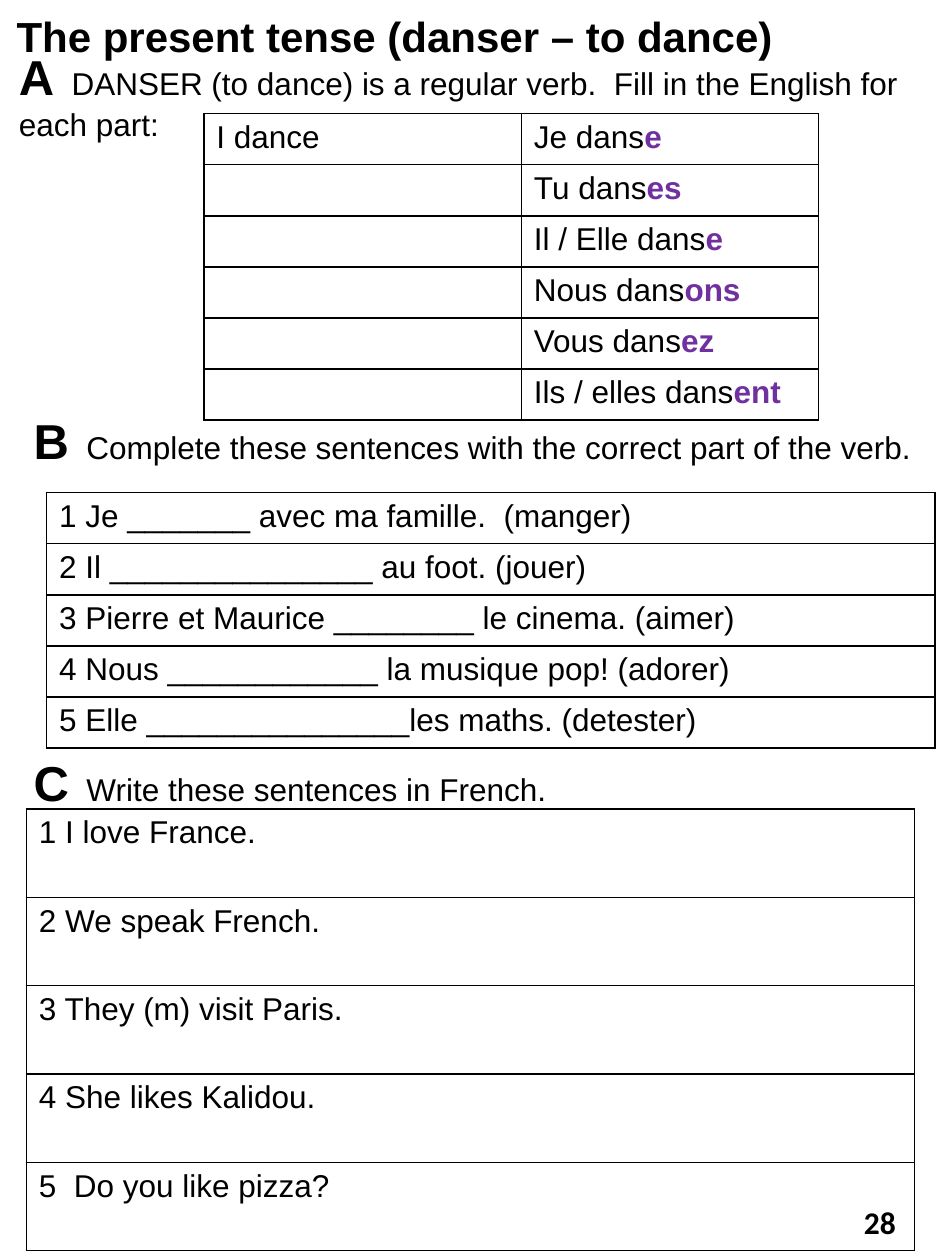
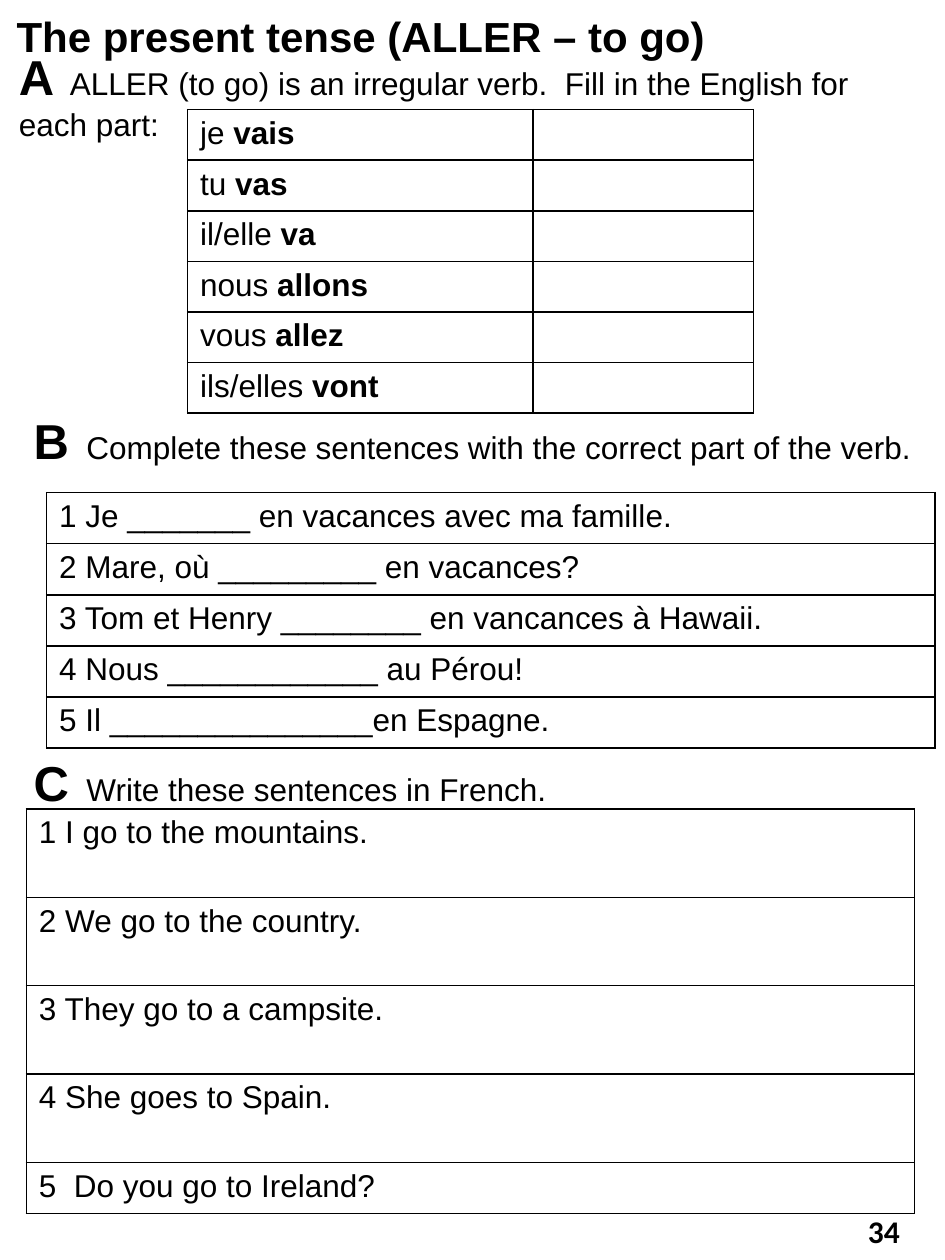
from lxml import etree
from pptx import Presentation
from pptx import util as u
from pptx.dml.color import RGBColor
from pptx.enum import shapes, text
from pptx.oxml import ns

BLACK = RGBColor(0x00, 0x00, 0x00)
PURPLE = RGBColor(0x70, 0x30, 0xA0)
BODY_FONT, NUMBER_FONT = "Arial", "Calibri"
TITLE_ONLY = 5
SENTENCE_WIDTH = 17.91
ROW, WRITING_ROW = 1.03, 1.78

WORKSHEETS = [
    {
        "title": "The present tense (danser – to dance)",
        "verb_task": "DANSER (to dance) is a regular verb.  Fill in the English for each part:",
        "verb_place": (4.11, 2.29),
        "verb_columns": [6.4, 5.99],
        "verb_row": ROW,
        "ending_colour": PURPLE,
        "verb_rows": [
            [("I dance", ""), ("Je dans", "e")],
            [None, ("Tu dans", "es")],
            [None, ("Il / Elle dans", "e")],
            [None, ("Nous dans", "ons")],
            [None, ("Vous dans", "ez")],
            [None, ("Ils / elles dans", "ent")],
        ],
        "gap_sentences": [
            "1 Je _______ avec ma famille.  (manger)",
            "2 Il _______________ au foot. (jouer)",
            "3 Pierre et Maurice ________ le cinema. (aimer)",
            "4 Nous ____________ la musique pop! (adorer)",
            "5 Elle _______________les maths. (detester)",
        ],
        "translations": [
            "1 I love France.",
            "2 We speak French.",
            "3 They (m) visit Paris.",
            "4 She likes Kalidou.",
            "5  Do you like pizza?",
        ],
        "last_row": WRITING_ROW,
        "number": "28",
        "number_place": (17.04, 24.03),
    },
    {
        "title": "The present tense (ALLER – to go)",
        "verb_task": "ALLER (to go) is an irregular verb.  Fill in the English for each part:",
        "verb_place": (3.78, 2.21),
        "verb_columns": [6.96, 4.45],
        "verb_row": 1.02,
        "ending_colour": BLACK,
        "verb_rows": [
            [("je ", "vais"), None],
            [("tu ", "vas"), None],
            [("il/elle ", "va"), None],
            [("nous ", "allons"), None],
            [("vous ", "allez"), None],
            [("ils/elles ", "vont"), None],
        ],
        "gap_sentences": [
            "1 Je _______ en vacances avec ma famille.",
            "2 Mare, où _________ en vacances?",
            "3 Tom et Henry ________ en vancances à Hawaii.",
            "4 Nous ____________ au Pérou!",
            "5 Il _______________en Espagne.",
        ],
        "translations": [
            "1 I go to the mountains.",
            "2 We go to the country.",
            "3 They go to a campsite.",
            "4 She goes to Spain.",
            "5  Do you go to Ireland?",
        ],
        "last_row": ROW,
        "number": "34",
        "number_place": (17.12, 24.21),
    },
]


def add_run(paragraph, words, size=18, bold=False, colour=BLACK, font=BODY_FONT):
    run = paragraph.add_run()
    run.text = words
    run.font.size = u.Pt(size)
    run.font.bold = bold
    run.font.name = font
    run.font.color.rgb = colour


def add_borders(cell):
    properties = cell._tc.get_or_add_tcPr()
    for side in ("a:lnL", "a:lnR", "a:lnT", "a:lnB"):
        line = etree.SubElement(properties, ns.qn(side), w=str(u.Pt(1)))
        fill = etree.SubElement(line, ns.qn("a:solidFill"))
        etree.SubElement(fill, ns.qn("a:srgbClr"), val=str(BLACK))


class Worksheet:
    """Draws the worksheet style on the current slide; lengths are in centimetres."""

    def __init__(self, presentation):
        self.presentation = presentation
        self.slide = None

    def new_slide(self):
        layout = self.presentation.slide_layouts[TITLE_ONLY]
        self.slide = self.presentation.slides.add_slide(layout)

    def title(self, words):
        shape = self.slide.shapes.title
        shape.left, shape.top = u.Cm(0.08), u.Cm(0.08)
        shape.width, shape.height = u.Cm(18.14), u.Cm(1.27)
        frame = shape.text_frame
        frame.auto_size = text.MSO_AUTO_SIZE.NONE
        frame.vertical_anchor = text.MSO_ANCHOR.TOP
        paragraph = frame.paragraphs[0]
        paragraph.alignment = text.PP_ALIGN.LEFT
        add_run(paragraph, words, size=24, bold=True)

    def task(self, letter, words, left, top, height=1.45):
        box = self.slide.shapes.add_textbox(u.Cm(left), u.Cm(top), u.Cm(18.72), u.Cm(height))
        box.text_frame.word_wrap = True
        paragraph = box.text_frame.paragraphs[0]
        add_run(paragraph, letter, size=28, bold=True)
        add_run(paragraph, "  " + words)

    def table(self, place, columns, heights, rows, ending_colour=BLACK):
        """Each cell is None or a pair: plain words and their bold ending."""
        left, top = place
        frame = self.slide.shapes.add_table(
            len(rows), len(columns), u.Cm(left), u.Cm(top),
            u.Cm(sum(columns)), u.Cm(sum(heights)))
        table = frame.table
        table.first_row = table.horz_banding = False
        for column, width in zip(table.columns, columns):
            column.width = u.Cm(width)
        for row, height, contents in zip(table.rows, heights, rows):
            row.height = u.Cm(height)
            for cell, content in zip(row.cells, contents):
                add_borders(cell)
                cell.fill.background()
                paragraph = cell.text_frame.paragraphs[0]
                paragraph.font.size = u.Pt(18)
                if content:
                    stem, ending = content
                    add_run(paragraph, stem)
                    if ending:
                        add_run(paragraph, ending, bold=True, colour=ending_colour)

    def sentences(self, place, heights, lines):
        self.table(place, [SENTENCE_WIDTH], heights, [[(line, "")] for line in lines])

    def page_number(self, number, place):
        left, top = place
        shape = self.slide.shapes.add_shape(
            shapes.MSO_SHAPE.ROUNDED_RECTANGLE, u.Cm(left), u.Cm(top), u.Cm(1.4), u.Cm(1.19))
        shape.shadow.inherit = False
        shape.fill.background()
        shape.line.fill.background()
        shape.text_frame.vertical_anchor = text.MSO_ANCHOR.MIDDLE
        paragraph = shape.text_frame.paragraphs[0]
        paragraph.alignment = text.PP_ALIGN.CENTER
        add_run(paragraph, number, bold=True, font=NUMBER_FONT)

    def draw(self, sheet):
        self.new_slide()
        self.title(sheet["title"])
        self.task("A", sheet["verb_task"], 0.13, 0.81, height=2.24)
        self.task("B", "Complete these sentences with the correct part of the verb.", 0.43, 8.15)
        self.task("C", "Write these sentences in French.", 0.43, 15.04)
        self.table(sheet["verb_place"], sheet["verb_columns"],
                   [sheet["verb_row"]] * len(sheet["verb_rows"]),
                   sheet["verb_rows"], sheet["ending_colour"])
        self.sentences((0.94, 9.93), [ROW] * 5, sheet["gap_sentences"])
        self.sentences((0.53, 16.31), [WRITING_ROW] * 4 + [sheet["last_row"]],
                       sheet["translations"])
        self.page_number(sheet["number"], sheet["number_place"])


def main():
    presentation = Presentation()
    presentation.slide_width, presentation.slide_height = u.Cm(19.05), u.Cm(25.4)
    worksheet = Worksheet(presentation)
    for sheet in WORKSHEETS:
        worksheet.draw(sheet)
    presentation.save("out.pptx")


if __name__ == "__main__":
    main()
